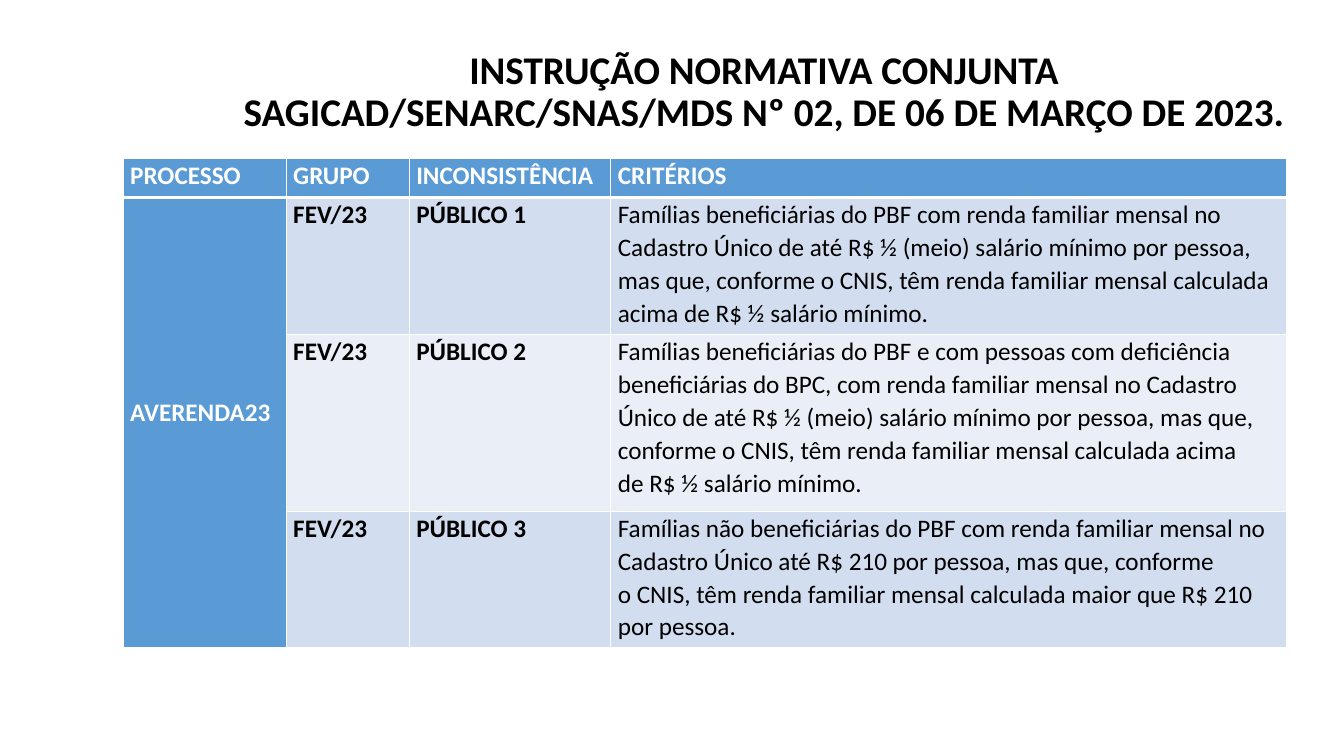
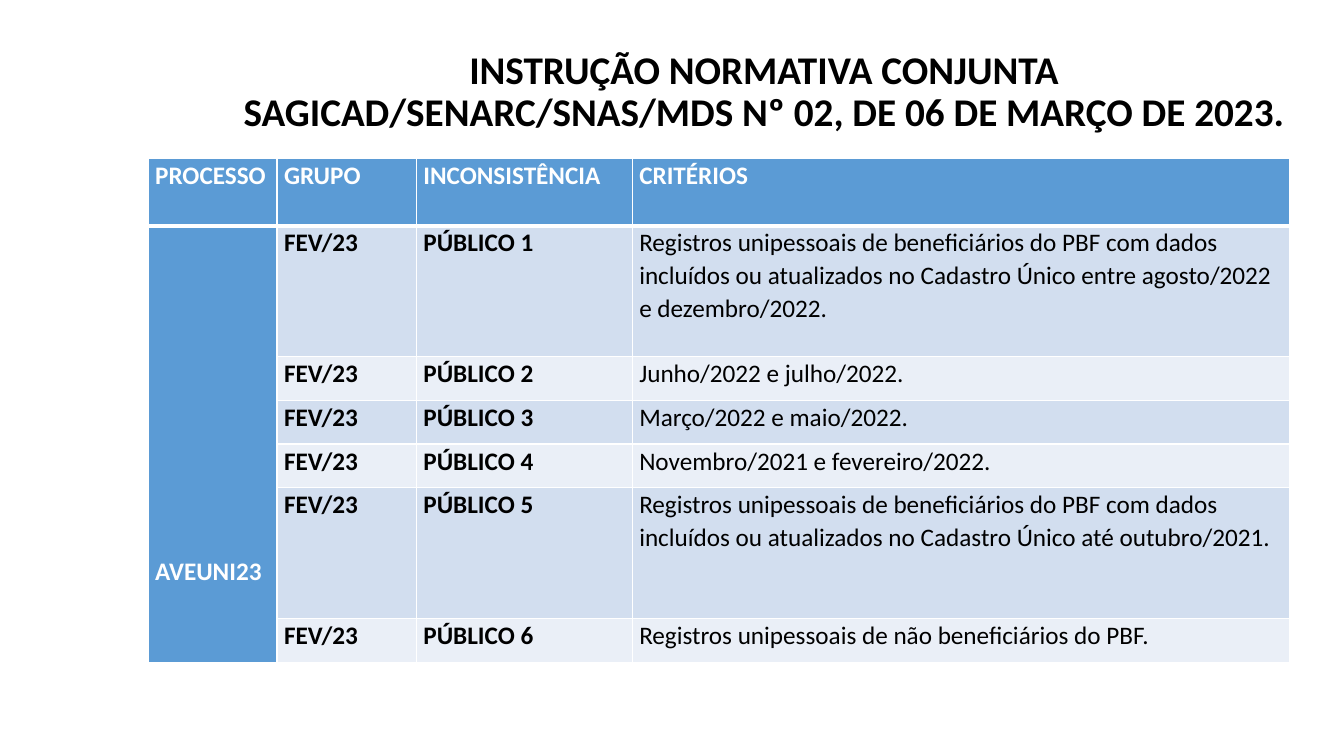
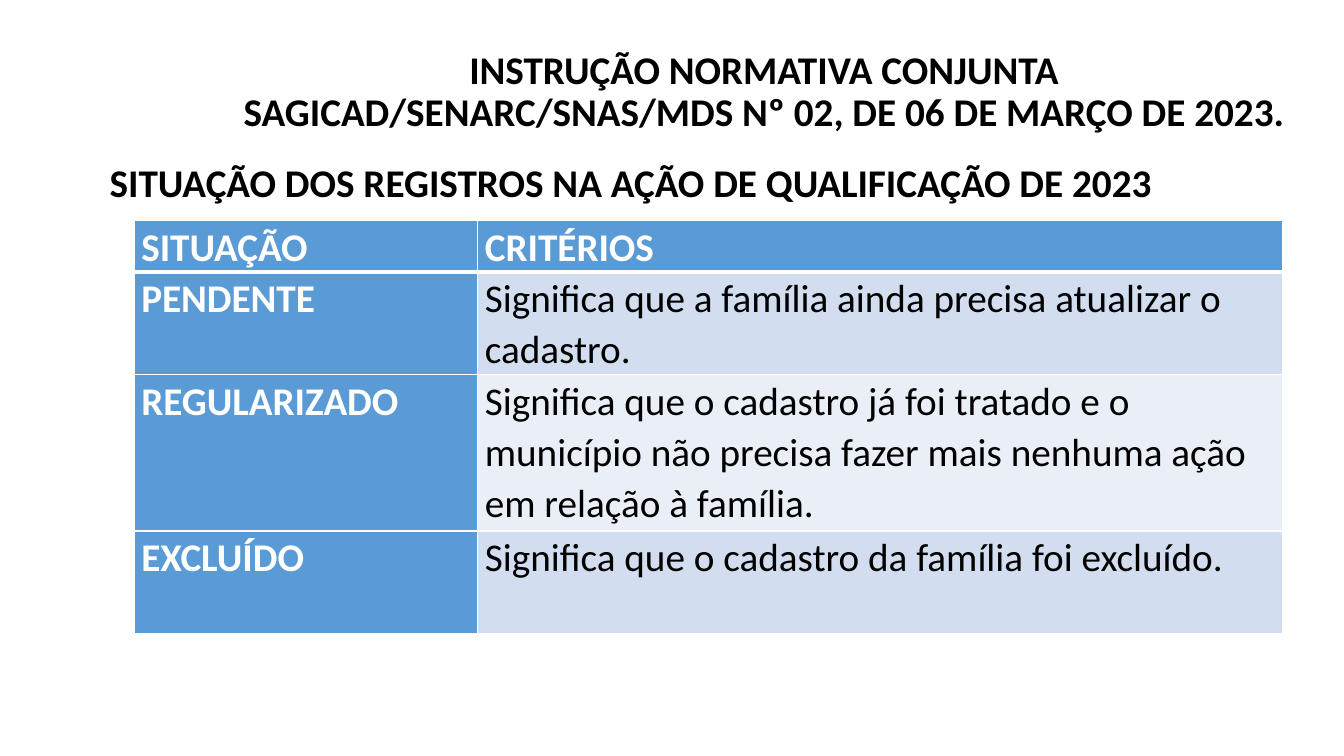
from dataclasses import dataclass

from lxml import etree
from pptx import Presentation
from pptx.dml.color import RGBColor
from pptx.enum.text import MSO_ANCHOR, MSO_AUTO_SIZE, PP_ALIGN
from pptx.oxml.ns import qn
from pptx.util import Cm, Pt

CENTER, JUSTIFY = PP_ALIGN.CENTER, PP_ALIGN.JUSTIFY
TOP, MIDDLE = MSO_ANCHOR.TOP, MSO_ANCHOR.MIDDLE
NO_AUTOFIT = MSO_AUTO_SIZE.NONE
TITLE_AND_CONTENT, TITLE_ONLY = 1, 5


@dataclass(frozen=True)
class Theme:
    font: str = "Calibri"
    text: str = "000000"
    white: str = "FFFFFF"
    accent: str = "5B9BD5"
    bands: tuple = ("D2DEEF", "EAEFF7")
    large: int = 28
    small: int = 18
    heading_spacing: float = 0.9
    cell_spacing: float = 1.07
    thin: int = 1
    thick: int = 3
    inset: float = 0.18


THEME = Theme()
TITLE = "INSTRUÇÃO NORMATIVA CONJUNTA SAGICAD/SENARC/SNAS/MDS Nº 02, DE 06 DE MARÇO DE 2023."
TITLE_BOX = (5.46, 1.02, 27.58, 2.62)
SUBTITLE_BOX = (2.51, 3.99, 29.06, 12.37)
PROCESS_HEADER = ["PROCESSO", "GRUPO", "INCONSISTÊNCIA", "CRITÉRIOS"]

INCOME_CRITERIA = [
    "Famílias beneficiárias do PBF com renda familiar mensal no Cadastro Único de até R$ ½ (meio) salário mínimo por pessoa,\n"
    "mas que, conforme o CNIS, têm renda familiar mensal calculada acima de R$ ½ salário mínimo.",
    "Famílias beneficiárias do PBF e com pessoas com deficiência beneficiárias do BPC, com renda familiar mensal no Cadastro\n"
    "Único de até R$ ½ (meio) salário mínimo por pessoa, mas que, conforme o CNIS, têm renda familiar mensal calculada acima\n"
    "de R$ ½ salário mínimo.",
    "Famílias não beneficiárias do PBF com renda familiar mensal no Cadastro Único até R$ 210 por pessoa, mas que, conforme\n"
    "o CNIS, têm renda familiar mensal calculada maior que R$ 210 por pessoa.",
]
SINGLE_PERSON_CRITERIA = [
    "Registros unipessoais de beneficiários do PBF com dados incluídos ou atualizados no Cadastro Único entre agosto/2022 e dezembro/2022.",
    "Junho/2022 e julho/2022.",
    "Março/2022 e maio/2022.",
    "Novembro/2021 e fevereiro/2022.",
    "Registros unipessoais de beneficiários do PBF com dados incluídos ou atualizados no Cadastro Único até outubro/2021.",
    "Registros unipessoais de não beneficiários do PBF.",
]
STATUS_ROWS = [
    ["SITUAÇÃO", "CRITÉRIOS"],
    ["PENDENTE", "Significa que a família ainda precisa atualizar o cadastro."],
    ["REGULARIZADO", "Significa que o cadastro já foi tratado e o município não precisa fazer mais nenhuma ação em relação à família."],
    ["EXCLUÍDO", "Significa que o cadastro da família foi excluído."],
]


def format_text(tf, size, color, bold, spacing, align=None):
    for p in tf.paragraphs:
        p.alignment = align
        p.line_spacing = spacing
        p.space_before = Pt(0)
        for r in p.runs:
            r.font.name = THEME.font
            r.font.size = Pt(size)
            r.font.bold = bold
            r.font.color.rgb = RGBColor.from_string(color)


def fill_placeholder(sp, box, text, anchor, align):
    sp.left, sp.top, sp.width, sp.height = map(Cm, box)
    tf = sp.text_frame
    tf.text = text
    tf.word_wrap = True
    tf.auto_size = NO_AUTOFIT
    tf.vertical_anchor = anchor
    format_text(tf, THEME.large, THEME.text, True, THEME.heading_spacing, align)


def add_titled_slide(prs, layout):
    s = prs.slides.add_slide(prs.slide_layouts[layout])
    fill_placeholder(s.shapes.title, TITLE_BOX, TITLE, MIDDLE, CENTER)
    return s


def add_subtitle(s, box, text):
    sp = s.placeholders[1]
    fill_placeholder(sp, box, text, TOP, JUSTIFY)
    pPr = sp.text_frame.paragraphs[0]._p.get_or_add_pPr()
    pPr.set("marL", "0")
    pPr.set("indent", "0")
    etree.SubElement(pPr, qn("a:buNone"))


def set_borders(cell, row):
    tcPr = cell._tc.get_or_add_tcPr()
    widths = {
        "a:lnL": THEME.thin,
        "a:lnR": THEME.thin,
        "a:lnT": THEME.thick if row == 1 else THEME.thin,
        "a:lnB": THEME.thick if row == 0 else THEME.thin,
    }
    for tag, width in widths.items():
        ln = etree.SubElement(tcPr, qn(tag), w=str(Pt(width)))
        fill = etree.SubElement(ln, qn("a:solidFill"))
        etree.SubElement(fill, qn("a:srgbClr"), val=THEME.white)


def format_cell(cell, row, col, size, bold):
    heading = row == 0 or col == 0
    cell.margin_left = cell.margin_right = Cm(THEME.inset)
    cell.margin_top = cell.margin_bottom = Cm(0)
    cell.vertical_anchor = TOP
    set_borders(cell, row)
    cell.fill.solid()
    band = THEME.bands[(row - 1) % len(THEME.bands)]
    cell.fill.fore_color.rgb = RGBColor.from_string(THEME.accent if heading else band)
    color = THEME.white if heading else THEME.text
    format_text(cell.text_frame, size, color, bold, THEME.cell_spacing)


def add_table(s, left, top, widths, heights, rows, size):
    frame = s.shapes.add_table(len(rows), len(widths), Cm(left), Cm(top),
                               Cm(sum(widths)), Cm(sum(heights)))
    table = frame.table
    table.horz_banding = False
    for column, width in zip(table.columns, widths):
        column.width = Cm(width)
    for table_row, height in zip(table.rows, heights):
        table_row.height = Cm(height)
    last = len(widths) - 1
    for row, values in enumerate(rows):
        for col, value in enumerate(values):
            cell = table.cell(row, col)
            cell.text_frame.text = value
            format_cell(cell, row, col, size, row == 0 or col < last)
    return table


def process_slide(prs, left, widths, heights, process, label_offset, criteria):
    s = add_titled_slide(prs, TITLE_ONLY)
    rows = [PROCESS_HEADER] + [
        [process if n == 1 else "", "FEV/23", f"PÚBLICO {n}", text]
        for n, text in enumerate(criteria, 1)
    ]
    table = add_table(s, left, 3.99, widths, heights, rows, THEME.small)
    label = table.cell(1, 0)
    label.merge(table.cell(len(criteria), 0))
    label.margin_top = Cm(label_offset)


def status_slide(prs):
    s = add_titled_slide(prs, TITLE_AND_CONTENT)
    add_subtitle(s, SUBTITLE_BOX, "SITUAÇÃO DOS REGISTROS NA AÇÃO DE QUALIFICAÇÃO DE 2023")
    add_table(s, 3.38, 5.56, [8.66, 20.27], [1.27, 2.59, 3.94, 2.59],
              STATUS_ROWS, THEME.large)


def main():
    prs = Presentation()
    prs.slide_width, prs.slide_height = Cm(33.87), Cm(19.05)
    process_slide(prs, 3.1, [4.11, 3.1, 5.08, 17.04], [0.99, 3.45, 4.45, 3.45],
                  "AVERENDA23", 4.98, INCOME_CRITERIA)
    process_slide(prs, 3.73, [3.25, 3.51, 5.44, 16.56],
                  [1.7, 3.3, 1.1, 1.1, 1.1, 3.3, 1.1],
                  "AVEUNI23", 8.29, SINGLE_PERSON_CRITERIA)
    status_slide(prs)
    prs.save("out.pptx")


if __name__ == "__main__":
    main()
